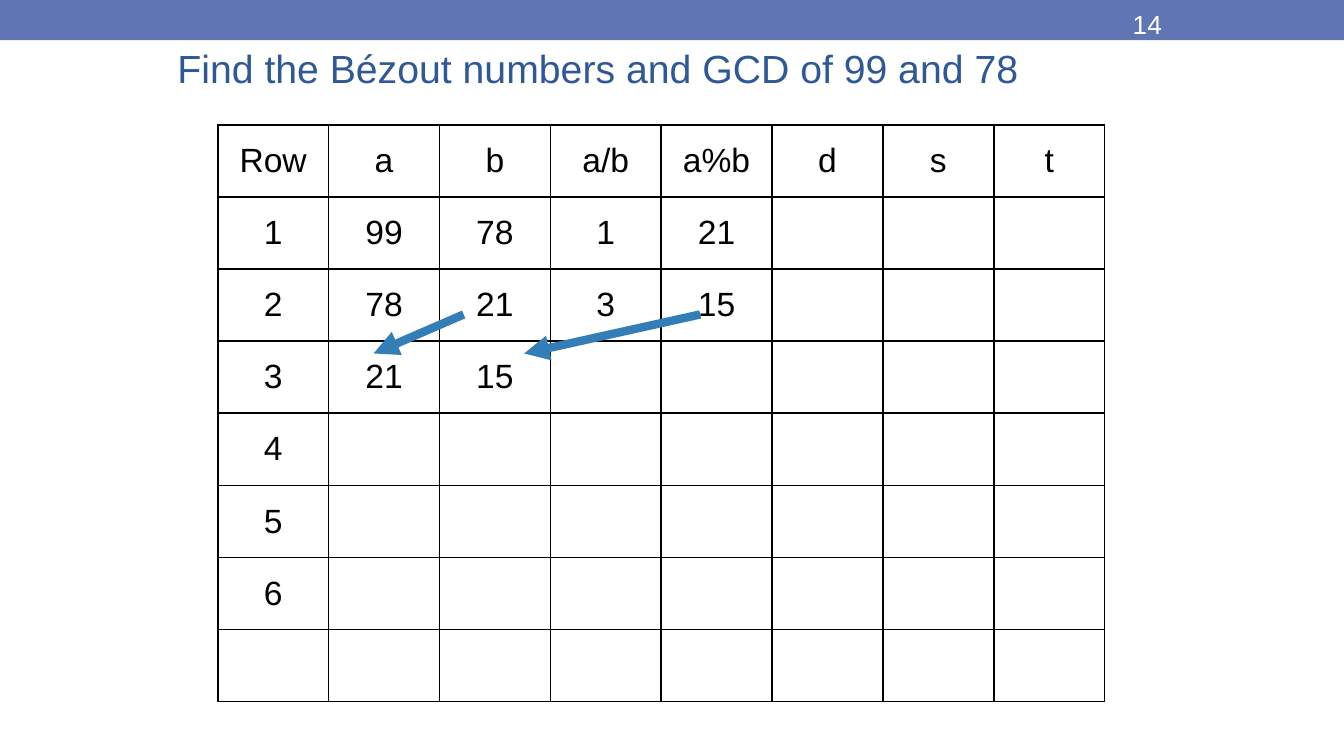
from lxml.etree import SubElement
from pptx import Presentation
from pptx.dml.color import RGBColor
from pptx.enum.shapes import MSO_CONNECTOR, MSO_SHAPE
from pptx.enum.text import MSO_ANCHOR, PP_ALIGN
from pptx.oxml.ns import qn
from pptx.util import Inches, Pt

FONT = "Arial"
HEADERS = ["Row", "a", "b", "a/b", "a%b", "d", "s", "t"]
STEPS = [
    ["1", "99", "78", "1", "21"],
    ["2", "78", "21", "3", "15"],
    ["3", "21", "15"],
    ["4"],
    ["5"],
    ["6"],
    [],
]


def color(hex_value):
    return RGBColor.from_string(hex_value)


def style(para, size, hex_value, align=PP_ALIGN.LEFT):
    para.alignment = align
    para.font.name = FONT
    para.font.size = Pt(size)
    para.font.color.rgb = color(hex_value)


def place(shape, left, top, width, height):
    shape.left, shape.top = Inches(left), Inches(top)
    shape.width, shape.height = Inches(width), Inches(height)


def add_banner(page, left, top, width, height):
    # Coloured strip
    strip = page.shapes.add_shape(
        MSO_SHAPE.RECTANGLE, Inches(left), Inches(top), Inches(width), Inches(height))
    strip.shadow.inherit = False
    strip.fill.solid()
    strip.fill.fore_color.rgb = color("6076B4")
    strip.line.fill.background()

    # Page number
    box = page.shapes.add_textbox(
        Inches(left + 8.33), Inches(top + 0.01), Inches(1.17), Inches(0.27))
    box.text_frame.word_wrap = True
    para = box.text_frame.paragraphs[0]
    para.text = "14"
    style(para, 14, "FFFFFF")


def set_title(page, text, left, top, width, height):
    title = page.shapes.title
    place(title, left, top, width, height)
    frame = title.text_frame
    frame.text = text
    frame.word_wrap = True
    frame.vertical_anchor = MSO_ANCHOR.BOTTOM
    frame.margin_left = frame.margin_right = Inches(0.07)
    frame.margin_top = frame.margin_bottom = Inches(0.07)
    style(frame.paragraphs[0], 21, "2F5897")


def add_borders(cell, hex_value, width):
    properties = cell._tc.get_or_add_tcPr()
    for side in ("a:lnL", "a:lnR", "a:lnT", "a:lnB"):
        line = SubElement(properties, qn(side), w=str(Pt(width)))
        fill = SubElement(line, qn("a:solidFill"))
        SubElement(fill, qn("a:srgbClr"), val=hex_value)


def add_euclid_table(page, left, top, width, height):
    rows = [HEADERS] + STEPS
    table = page.shapes.add_table(
        len(rows), len(HEADERS),
        Inches(left), Inches(top), Inches(width), Inches(height)).table
    table.first_row = table.horz_banding = False
    for row_index, values in enumerate(rows):
        for column_index in range(len(HEADERS)):
            cell = table.cell(row_index, column_index)
            add_borders(cell, "000000", 1)
            cell.fill.background()
            cell.vertical_anchor = MSO_ANCHOR.MIDDLE
            cell.margin_left = cell.margin_right = Inches(0.08)
            cell.margin_top = cell.margin_bottom = Inches(0.04)
            para = cell.text_frame.paragraphs[0]
            if column_index < len(values):
                para.text = values[column_index]
            style(para, 18, "000000", PP_ALIGN.CENTER)

    # Arrows carrying b and a%b down to the next a and b
    for start, end in ((1.83, 1.16), (3.59, 2.28)):
        add_arrow(page, left + start, top + 1.41, left + end, top + 1.7)


def add_arrow(page, start_x, start_y, end_x, end_y):
    arrow = page.shapes.add_connector(
        MSO_CONNECTOR.STRAIGHT,
        Inches(start_x), Inches(start_y), Inches(end_x), Inches(end_y))
    arrow.line.color.rgb = color("347EB8")
    arrow.line.width = Pt(4.5)
    SubElement(arrow.line._get_or_add_ln(), qn("a:tailEnd"), type="triangle")
    SubElement(arrow._element.spPr, qn("a:effectLst"))


def main():
    deck = Presentation()
    # Widescreen, 16:9
    deck.slide_width = Inches(10)
    deck.slide_height = deck.slide_width * 9 // 16
    page = deck.slides.add_slide(deck.slide_layouts[5])
    add_banner(page, 0, 0, 10, 0.3)
    set_title(page, "Find the Bézout numbers and GCD of 99 and 78", 1.25, 0, 7.5, 0.75)
    add_euclid_table(page, 1.62, 0.93, 6.6, 4.29)
    deck.save("out.pptx")


if __name__ == "__main__":
    main()
